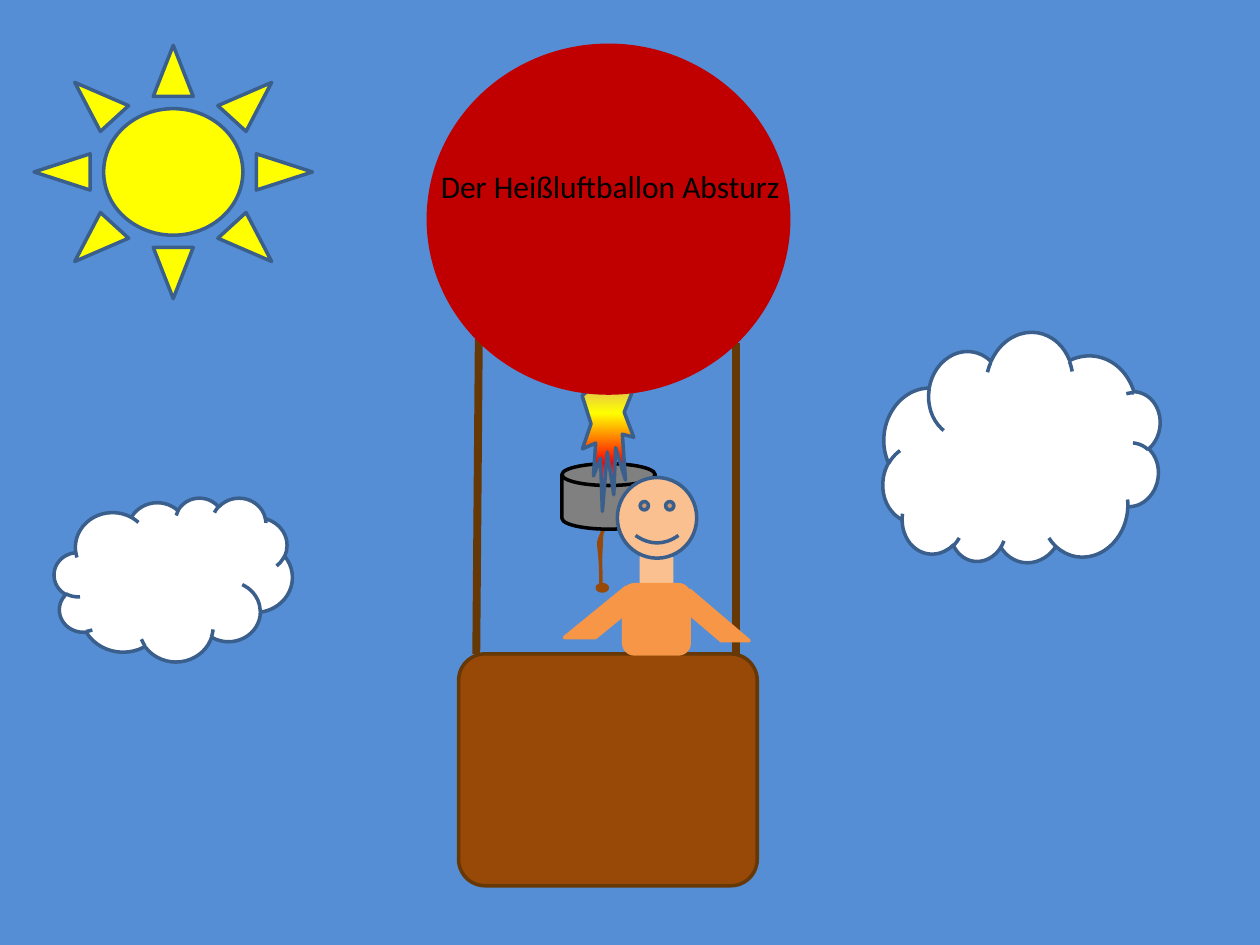
from lxml import etree
from pptx import Presentation
from pptx.dml.color import RGBColor
from pptx.enum.shapes import MSO_CONNECTOR, MSO_SHAPE as Preset
from pptx.enum.text import MSO_AUTO_SIZE
from pptx.oxml import parse_xml
from pptx.oxml.ns import nsdecls, qn
from pptx.util import Inches, Pt

COLORS = {
    "sky": "558ED5", "outline": "3A5F8C", "yellow": "FFFF00", "skin": "FAC090",
    "brown": "984807", "rope": "663806", "gray": "808080", "black": "000000",
    "red": "C00000", "shirt": "F79646", "white": "FFFFFF",
}
FLAME_STOPS = [(0, "E46C0A"), (29, "D39F7C"), (49, "FFFF00"), (75, "FF0000"), (100, "E1E8F5")]

SUN = (Preset.SUN, (0.27, 0.36, 2.21, 2.01), "yellow", "outline", {})
NECK = (Preset.ROUNDED_RECTANGLE, (5.09, 4.39, 0.24, 0.31), "skin", "skin", {})
ROPES = [((3.8, 2.69), (3.78, 5.19)), ((5.84, 2.72), (5.84, 5.22))]
BASKET = (Preset.ROUNDED_RECTANGLE, (3.64, 5.19, 2.37, 1.84), "brown", "rope", {"adjust": 0.114})
CORD_CURVE = [(4.79, 4.2), (4.72, 4.38), (4.77, 4.23), (4.77, 4.66)]
CORD_STEPS = 16
BURNER = [
    (Preset.OVAL, (4.74, 4.64, 0.08, 0.05), "brown", "brown", {}),
    (Preset.FLOWCHART_MAGNETIC_DISK, (4.46, 3.68, 0.74, 0.52), "gray", "black", {}),
]
FLAME = (Preset.EXPLOSION1, (4.62, 2.53, 0.41, 1.53), "yellow", "outline", {})
BALLOON_AND_PILOT = [
    (Preset.OVAL, (3.4, 0.36, 2.86, 2.76), "red", "red", {}),
    (Preset.ROUNDED_RECTANGLE, (4.95, 4.64, 0.52, 0.55), "shirt", "shirt", {}),
    (Preset.SMILEY_FACE, (4.9, 3.79, 0.63, 0.64), "skin", "outline", {}),
    (Preset.DIAGONAL_STRIPE, (5.51, 4.65, 0.4, 0.47), "shirt", "shirt",
     {"rotation": 270, "adjust": 0.532}),
    (Preset.DIAGONAL_STRIPE, (4.48, 4.66, 0.49, 0.4), "shirt", "shirt", {"rotation": 180}),
]
CLOUDS = [
    (Preset.CLOUD, (7.01, 2.64, 2.2, 1.87), "white", "outline", {"rotation": 189.1}),
    (Preset.CLOUD, (0.43, 3.95, 1.89, 1.3), "white", "outline", {}),
]
TITLE = "Der Heißluftballon Absturz"
TITLE_BOX = (3.4, 1.28, 3.26, 0.4)
TITLE_FONT = {"name": "Calibri", "size": Pt(18)}


def color(name):
    return RGBColor.from_string(COLORS[name])


def paint(shape, fill, line):
    shape.shadow.inherit = False
    shape.fill.solid()
    shape.fill.fore_color.rgb = color(fill)
    shape.line.color.rgb = color(line)
    shape.line.width = Pt(2)


def add_preset(shapes, preset, box, fill, line, options):
    shape = shapes.add_shape(preset, *map(Inches, box))
    paint(shape, fill, line)
    shape.rotation = options.get("rotation", 0)
    if "adjust" in options:
        shape.adjustments[0] = options["adjust"]
    return shape


def add_rope(shapes, start, end):
    rope = shapes.add_connector(MSO_CONNECTOR.STRAIGHT, *map(Inches, start + end))
    rope.line.color.rgb = color("rope")
    rope.line.width = Pt(4.5)
    etree.SubElement(rope._element.spPr, qn("a:effectLst"))


def curve_point(t):
    weights = ((1 - t) ** 3, 3 * t * (1 - t) ** 2, 3 * t ** 2 * (1 - t), t ** 3)
    return tuple(Inches(sum(weight * point[axis] for weight, point in zip(weights, CORD_CURVE)))
                 for axis in (0, 1))


def add_cord(shapes):
    points = [curve_point(step / CORD_STEPS) for step in range(CORD_STEPS + 1)]
    builder = shapes.build_freeform(*points[0])
    builder.add_line_segments(points[1:], close=False)
    paint(builder.convert_to_shape(), "brown", "brown")


def add_flame(shapes):
    flame = add_preset(shapes, *FLAME)
    stops = "".join(f'<a:gs pos="{position * 1000}"><a:srgbClr val="{value}"/></a:gs>'
                    for position, value in FLAME_STOPS)
    gradient = parse_xml(f'<a:gradFill {nsdecls("a")} rotWithShape="1"><a:gsLst>{stops}</a:gsLst>'
                         '<a:lin ang="5400000" scaled="0"/></a:gradFill>')
    properties = flame._element.spPr
    properties.replace(properties.find(qn("a:solidFill")), gradient)


def add_title(shapes):
    frame = shapes.add_textbox(*map(Inches, TITLE_BOX)).text_frame
    frame.word_wrap = True
    frame.auto_size = MSO_AUTO_SIZE.SHAPE_TO_FIT_TEXT
    run = frame.paragraphs[0].add_run()
    run.text = TITLE
    for name, value in TITLE_FONT.items():
        setattr(run.font, name, value)
    run.font.color.rgb = color("black")


def main():
    presentation = Presentation()
    presentation.slide_width, presentation.slide_height = Inches(10), Inches(7.5)
    slide = presentation.slides.add_slide(presentation.slide_layouts[6])
    slide.background.fill.solid()
    slide.background.fill.fore_color.rgb = color("sky")

    add_preset(slide.shapes, *SUN)
    balloon = slide.shapes.add_group_shape().shapes
    add_preset(balloon, *NECK)
    for start, end in ROPES:
        add_rope(balloon, start, end)
    add_preset(balloon, *BASKET)
    add_cord(balloon)
    for part in BURNER:
        add_preset(balloon, *part)
    add_flame(balloon)
    for part in BALLOON_AND_PILOT:
        add_preset(balloon, *part)
    for cloud in CLOUDS:
        add_preset(slide.shapes, *cloud)
    add_title(slide.shapes)
    presentation.save("out.pptx")


if __name__ == "__main__":
    main()
